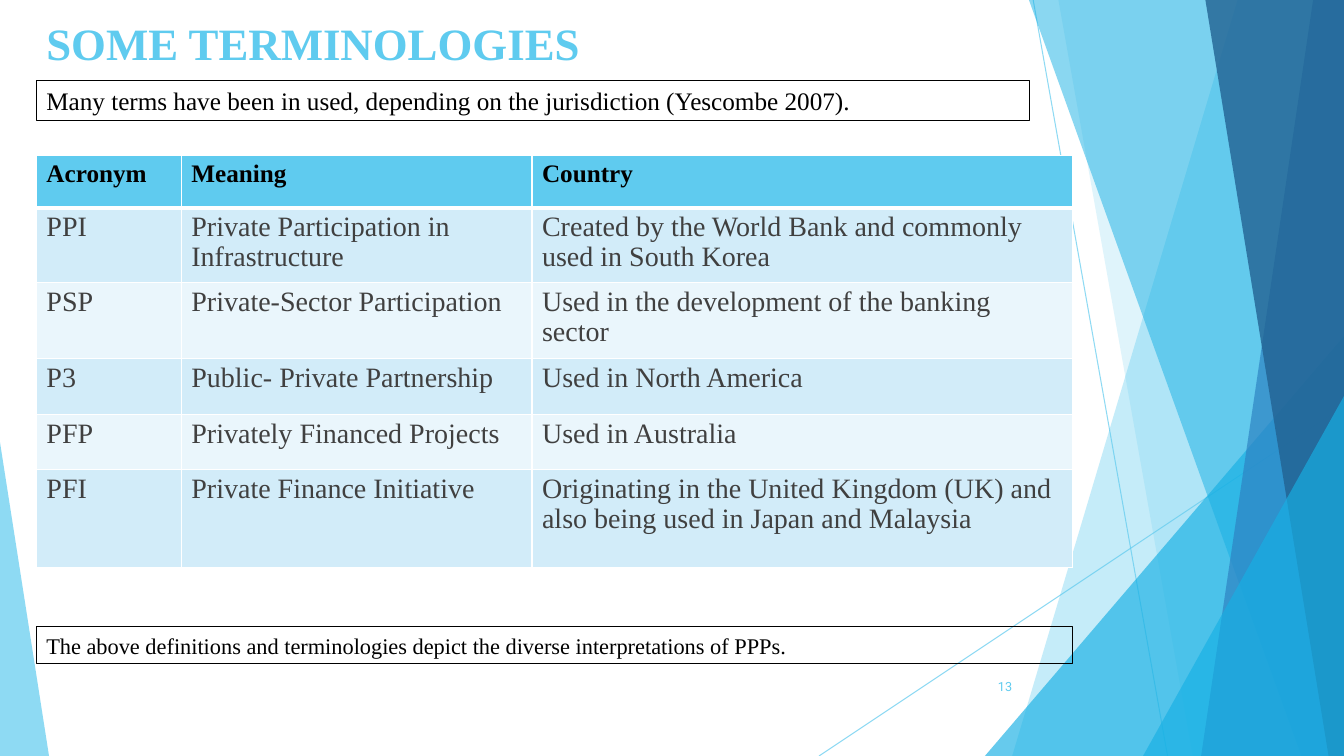
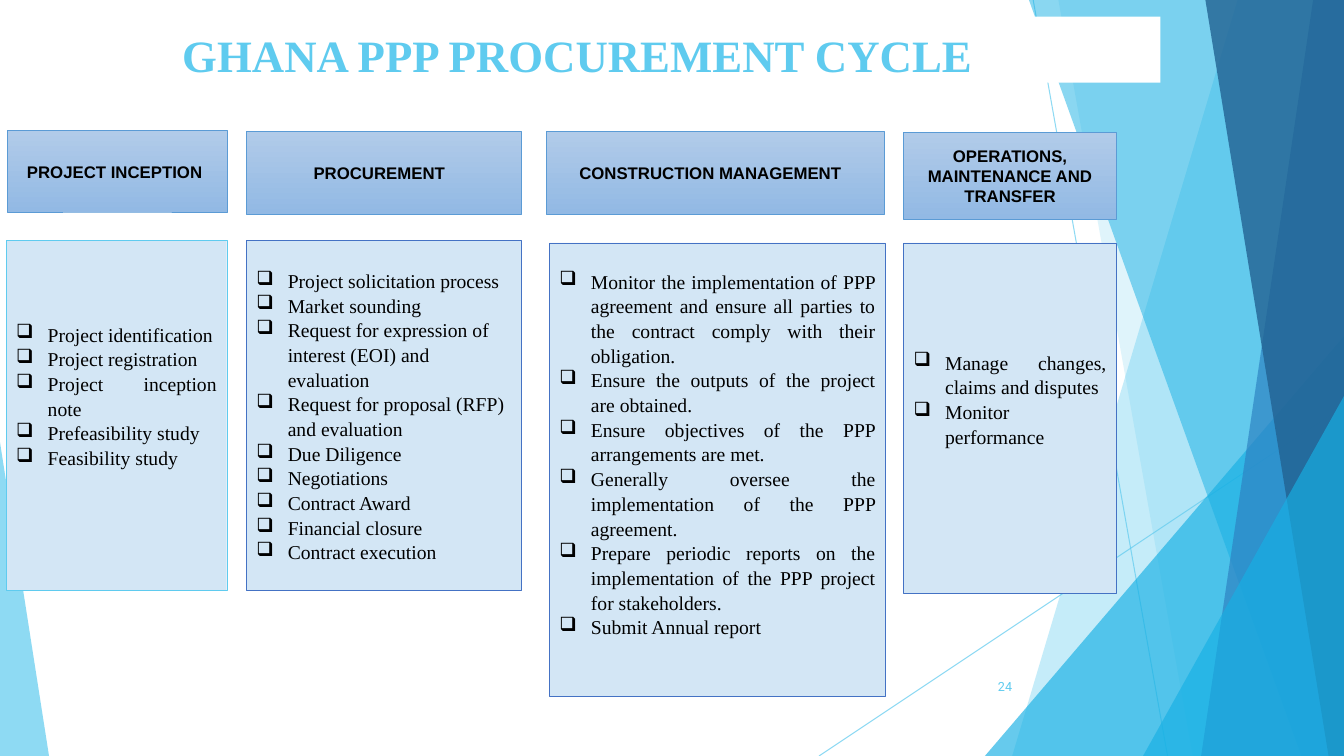
"""Build two slides on public-private partnership terms and procurement."""
from dataclasses import dataclass
from typing import NamedTuple, Optional

from lxml.etree import SubElement
from pptx import Presentation
from pptx.dml.color import RGBColor
from pptx.enum.shapes import MSO_CONNECTOR as Connector, MSO_SHAPE as Preset
from pptx.enum.text import MSO_ANCHOR as Anchor, PP_ALIGN as Align
from pptx.oxml.ns import qn
from pptx.util import Pt

WIDTH, HEIGHT = 960, 540
SKY, CYAN, BLUE, NAVY = "5FCBEF", "17B0E4", "2E83C3", "226292"
WHITE, BLACK, GREY = "FFFFFF", "000000", "404040"
BAND_FILLS = ("D2ECF9", "EAF6FC")
HEADER_TOP, HEADER_BOTTOM, HEADER_LINE = "B1CBE9", "92B9E4", "5B9BD5"
CARD_FILL, CARD_LINE = "D3E6F5", "4472C4"
SERIF = "Times New Roman"


class Area(NamedTuple):
    left: float
    top: float
    width: float
    height: float


class Style(NamedTuple):
    font: str
    size: float
    colour: str = BLACK
    bold: bool = False


class Pane(NamedTuple):
    top_x: float
    bottom_x: float
    colour: str
    opacity: int


class Wedge(NamedTuple):
    area: Area
    tip: float
    colour: str
    opacity: int


class Ray(NamedTuple):
    start: tuple[float, float]
    end: tuple[float, float]


@dataclass(frozen=True)
class Phase:
    name: str
    header: Area
    card: Area
    tasks: tuple[str, ...]
    header_pad: float = 0
    card_pad: float = 0
    align: Align = Align.JUSTIFY
    line: str = CARD_LINE
    line_width: float = 0.5


TITLE = Style(SERIF, 32, SKY, True)
NUMBER = Style("Roboto", 9, SKY)
TABLE_HEAD = Style(SERIF, 18, BLACK, True)
TABLE_BODY = Style(SERIF, 20, GREY)
PHASE_HEAD = Style("Arial", 12, BLACK, True)
TASK = Style(SERIF, 14)

RAYS = (Ray((738, 0), (834, HEIGHT)), Ray((WIDTH, 290), (585, HEIGHT)))
BACKDROP = (
    Pane(884, 723, SKY, 36),
    Pane(756, 852, SKY, 20),
    Wedge(Area(703.5, 240, 256.5, 300), 1, CYAN, 66),
    Pane(735, 929.5, CYAN, 50),
    Pane(938, 858, BLUE, 70),
    Pane(861, 949, NAVY, 80),
    Wedge(Area(816.5, 283, 143.5, 257), 1, CYAN, 66),
    Wedge(Area(0, 316, 35, 224), 0, SKY, 70),
)

TERMS = (
    ("Acronym", "Meaning", "Country"),
    ("PPI", "Private Participation in Infrastructure",
     "Created by the World Bank and commonly used in South Korea"),
    ("PSP", "Private-Sector Participation", "Used in the development of the banking sector"),
    ("P3", "Public- Private Partnership", "Used in North America"),
    ("PFP", "Privately Financed Projects", "Used in Australia"),
    ("PFI", "Private Finance Initiative",
     "Originating in the United Kingdom (UK) and also being used in Japan and Malaysia"),
)
TERM_COLUMNS = (103.5, 250.5, 386)
TERM_ROWS = (37.5, 53, 54, 40, 39.5, 70)

PHASES = (
    Phase("PROJECT INCEPTION", Area(5, 93.5, 157.5, 58), Area(4.5, 171.5, 157.5, 250),
          ("Project identification", "Project registration", "Project inception note",
           "Prefeasibility study", "Feasibility study"),
          header_pad=3.5, card_pad=28, line=SKY, line_width=0.25),
    Phase("PROCUREMENT", Area(176, 93.5, 196.5, 59.5), Area(176, 172, 196.5, 250),
          ("Project solicitation process", "Market sounding",
           "Request for expression of interest (EOI) and evaluation",
           "Request for proposal (RFP) and evaluation", "Due Diligence", "Negotiations",
           "Contract Award", "Financial closure", "Contract execution"),
          header_pad=6.5, align=Align.LEFT),
    Phase("CONSTRUCTION MANAGEMENT", Area(390, 94, 241.5, 59), Area(392.5, 173.5, 240, 324),
          ("Monitor the implementation of PPP agreement and ensure all parties to the "
           "contract comply with their obligation.",
           "Ensure the outputs of the project are obtained.",
           "Ensure objectives of the PPP arrangements are met.",
           "Generally oversee the implementation of the PPP agreement.",
           "Prepare periodic reports on the implementation of the PPP project for stakeholders.",
           "Submit Annual report"),
          header_pad=6.5, card_pad=23),
    Phase("OPERATIONS, MAINTENANCE AND TRANSFER", Area(645.5, 94.5, 152, 62),
          Area(645.5, 173.5, 152, 250.5),
          ("Manage changes, claims and disputes", "Monitor performance"), card_pad=28),
)


def rgb(colour: str) -> RGBColor:
    """Turn a hex string into a colour."""
    return RGBColor.from_string(colour)


def paint(fill, colour: str) -> None:
    """Give a fill one solid colour."""
    fill.solid()
    fill.fore_color.rgb = rgb(colour)


def fade(shape, opacity: int) -> None:
    """Set the opacity, in percent, of every colour of a shape."""
    for colour in list(shape.element.spPr.iter(qn("a:srgbClr"))):
        SubElement(colour, qn("a:alpha"), val=str(opacity * 1000))


def outline(shape, colour: str, width: float) -> None:
    """Draw the outline of a shape."""
    paint(shape.line.fill, colour)
    shape.line.width = Pt(width)


def add_span(para, text: str, style: Style) -> None:
    """Add one styled run to a paragraph."""
    span = para.add_run()
    span.text = text
    span.font.name = style.font
    span.font.size = Pt(style.size)
    span.font.bold = style.bold
    span.font.color.rgb = rgb(style.colour)


def add_bullet(para) -> None:
    """Give a paragraph a hanging box bullet."""
    properties = para._p.get_or_add_pPr()
    indent = int(Pt(22.5))
    properties.set("marL", str(indent))
    properties.set("indent", str(-indent))
    SubElement(properties, qn("a:buChar"), char="❑")


def write(box, lines: tuple[str, ...], style: Style, align: Align = Align.LEFT,
          anchor: Anchor = Anchor.MIDDLE, bullets: bool = False) -> None:
    """Fill a box with one paragraph a line."""
    frame = box.text_frame
    frame.word_wrap = True
    frame.vertical_anchor = anchor
    for index, line in enumerate(lines):
        para = frame.add_paragraph() if index else frame.paragraphs[0]
        para.alignment = align
        if bullets:
            para.line_spacing = 1.05
            add_bullet(para)
        add_span(para, line, style)


def add_text(page, area: Area, text: str, style: Style, align: Align = Align.LEFT):
    """Add a text box of one line."""
    box = page.shapes.add_textbox(*map(Pt, area))
    write(box, (text,), style, align)
    return box


def add_block(page, area: Area, preset: Preset = Preset.RECTANGLE):
    """Add a preset shape without shadow."""
    block = page.shapes.add_shape(preset, *map(Pt, area))
    block.shadow.inherit = False
    return block


def add_ray(page, ray: Ray) -> None:
    """Draw one thin line of the backdrop."""
    line = page.shapes.add_connector(Connector.STRAIGHT, *map(Pt, ray.start + ray.end))
    outline(line, SKY, 0.75)
    fade(line, 70)
    SubElement(line.element.spPr, qn("a:effectLst"))


def add_facet(page, facet: Pane | Wedge) -> None:
    """Draw one translucent facet of the backdrop."""
    if isinstance(facet, Pane):
        builder = page.shapes.build_freeform(Pt(facet.top_x), 0)
        corners = ((WIDTH, 0), (WIDTH, HEIGHT), (facet.bottom_x, HEIGHT))
        builder.add_line_segments([(Pt(x), Pt(y)) for x, y in corners], close=True)
        shape = builder.convert_to_shape()
        shape.shadow.inherit = False
    else:
        shape = add_block(page, facet.area, Preset.ISOSCELES_TRIANGLE)
        shape.adjustments[0] = facet.tip
    paint(shape.fill, facet.colour)
    shape.line.fill.background()
    fade(shape, facet.opacity)


def add_page(deck, title: str, area: Area, number: int,
             align: Align = Align.LEFT, right_pad: float = 0):
    """Add a page with backdrop, title and page number."""
    page = deck.slides.add_slide(deck.slide_layouts[6])
    for ray in RAYS:
        add_ray(page, ray)
    for facet in BACKDROP:
        add_facet(page, facet)
    box = add_text(page, area, title, TITLE, align)
    paint(box.fill, WHITE)
    frame = box.text_frame
    frame.vertical_anchor = Anchor.TOP
    frame.margin_top, frame.margin_bottom = Pt(7.5), 0
    frame.margin_right = Pt(7.2 + right_pad)
    add_text(page, Area(676, 476, 54, 29), str(number), NUMBER, Align.RIGHT)
    return page


def add_borders(cell, bottom: float) -> None:
    """Draw white borders round a table cell."""
    properties = cell._tc.get_or_add_tcPr()
    for side, width in (("L", 1), ("R", 1), ("T", 1), ("B", bottom)):
        border = SubElement(properties, qn(f"a:ln{side}"), w=str(int(Pt(width))))
        SubElement(SubElement(border, qn("a:solidFill")), qn("a:srgbClr"), val=WHITE)


def add_terms(page) -> None:
    """Add the table of terms."""
    area = Area(26, 111, sum(TERM_COLUMNS), sum(TERM_ROWS))
    table = page.shapes.add_table(len(TERM_ROWS), len(TERM_COLUMNS), *map(Pt, area)).table
    for column, width in zip(table.columns, TERM_COLUMNS):
        column.width = Pt(width)
    for index, (row, height, texts) in enumerate(zip(table.rows, TERM_ROWS, TERMS)):
        row.height = Pt(height)
        for cell, text in zip(row.cells, texts):
            add_borders(cell, 1 if index else 3)
            paint(cell.fill, BAND_FILLS[(index - 1) % 2] if index else SKY)
            para = cell.text_frame.paragraphs[0]
            para.line_spacing = 0.96 if index else 1.0
            add_span(para, text, TABLE_BODY if index else TABLE_HEAD)


def add_note(page, area: Area, text: str, size: float) -> None:
    """Add an outlined remark."""
    outline(add_text(page, area, text, Style(SERIF, size)), BLACK, 0.25)


def add_phase(page, phase: Phase) -> None:
    """Add the header and task card of one phase."""
    header = add_block(page, phase.header)
    header.fill.gradient()
    header.fill.gradient_angle = 270
    for stop, colour in zip(header.fill.gradient_stops, (HEADER_TOP, HEADER_BOTTOM)):
        stop.color.rgb = rgb(colour)
    outline(header, HEADER_LINE, 0.5)
    write(header, (phase.name,), PHASE_HEAD, Align.CENTER)
    header.text_frame.margin_right = Pt(7.2 + phase.header_pad)

    card = add_block(page, phase.card)
    paint(card.fill, CARD_FILL)
    outline(card, phase.line, phase.line_width)
    write(card, phase.tasks, TASK, phase.align, bullets=True)
    card.text_frame.margin_bottom = Pt(3.6 + phase.card_pad)


def main() -> None:
    """Build and save the deck."""
    deck = Presentation()
    deck.slide_width, deck.slide_height = Pt(WIDTH), Pt(HEIGHT)

    page = add_page(deck, "SOME TERMINOLOGIES", Area(26, 3.5, 677, 43), 13)
    add_terms(page)
    add_note(page, Area(26, 447.5, 740, 26.5),
             "The above definitions and terminologies depict the diverse interpretations of PPPs.", 16)
    add_note(page, Area(26, 57, 709, 29),
             "Many terms have been in used, depending on the jurisdiction (Yescombe 2007).", 18)

    page = add_page(deck, "GHANA PPP PROCUREMENT CYCLE", Area(12, 12, 817, 47), 24,
                    Align.CENTER, right_pad=16)
    for phase in PHASES:
        add_phase(page, phase)

    deck.save("out.pptx")


if __name__ == "__main__":
    main()
